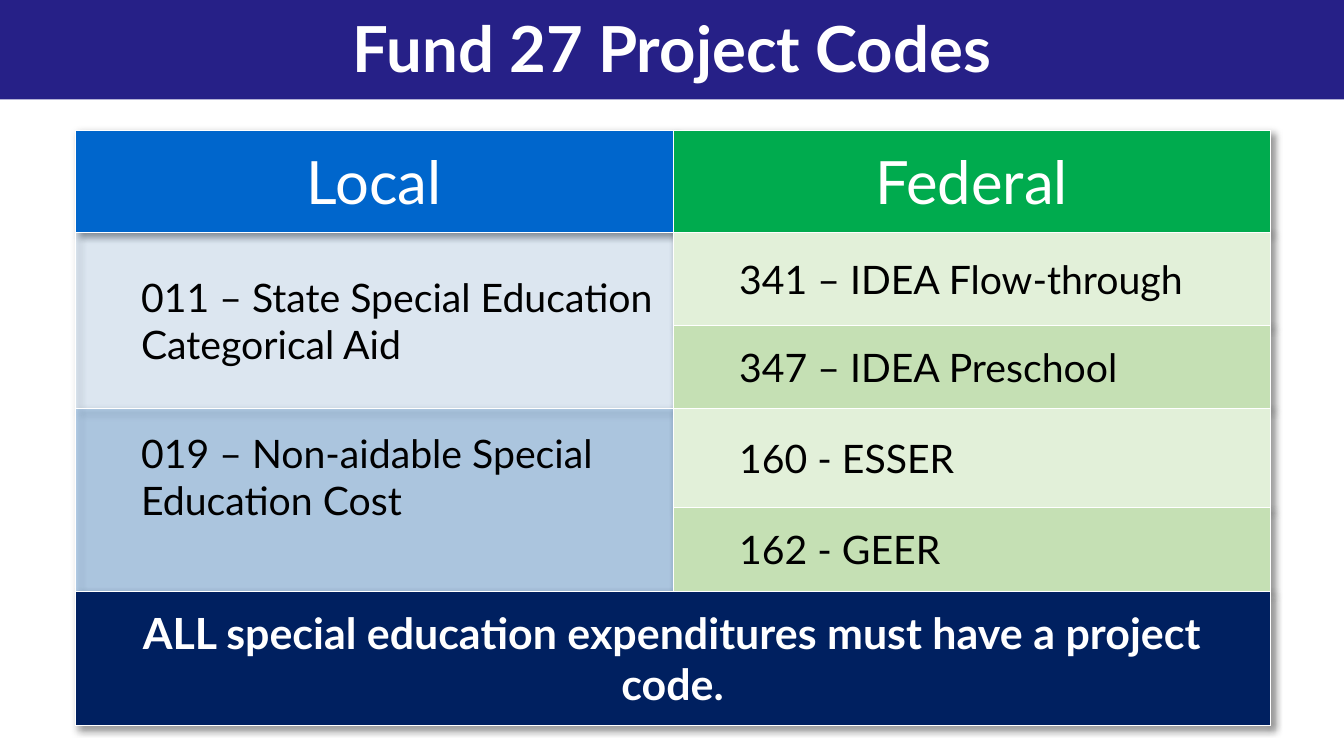
from dataclasses import dataclass

import lxml.etree
import pptx
import pptx.dml.color
import pptx.enum.text
import pptx.oxml
import pptx.util
from pptx.util import Inches

ALIGN = pptx.enum.text.PP_ALIGN
ANCHOR = pptx.enum.text.MSO_ANCHOR
NS = "http://schemas.openxmlformats.org/drawingml/2006/main"
FONT = "Lato"
MARGIN = 0.11
COLUMNS = [4.45, 4.44]
ROWS = [0.76, 0.69, 0.62, 0.74, 0.62, 1]


@dataclass
class TextStyle:
    size: int
    color: str
    align: ALIGN = ALIGN.LEFT
    anchor: ANCHOR = ANCHOR.MIDDLE
    bold: bool = False
    indent: float = 0
    spacing: int = 0


@dataclass
class Entry:
    row: int
    col: int
    text: str
    fill: str
    style: TextStyle
    rows: int = 1
    cols: int = 1
    opacity: int = 100
    lift: float = 0  # extra bottom margin


TITLE = TextStyle(34, "FFFFFF", ALIGN.CENTER, bold=True)
HEAD = TextStyle(32, "FFFFFF", ALIGN.CENTER, ANCHOR.TOP, spacing=6)
CODE = TextStyle(21, "000000", indent=0.38)
NOTE = TextStyle(23, "FFFFFF", ALIGN.CENTER, bold=True)

ENTRIES = [
    Entry(0, 0, "Local", "0066CC", HEAD),
    Entry(0, 1, "Federal", "00AB4E", HEAD),
    Entry(1, 0, "011 – State Special Education Categorical Aid", "0066CC", CODE,
          rows=2, opacity=10),
    Entry(3, 0, "019 – Non-aidable Special Education Cost", "0066CC", CODE,
          rows=2, opacity=25, lift=0.35),
    Entry(1, 1, "341 – IDEA Flow-through", "E2F0D9", CODE),
    Entry(2, 1, "347 – IDEA Preschool", "C5E0B4", CODE),
    Entry(3, 1, "160 - ESSER", "E2F0D9", CODE),
    Entry(4, 1, "162 - GEER", "C5E0B4", CODE),
    Entry(5, 0, "ALL special education expenditures must have a project code.",
          "002060", NOTE, cols=2),
]


def set_fill(fill, color: str, opacity: int = 100) -> None:
    fill.solid()
    fill.fore_color.rgb = pptx.dml.color.RGBColor.from_string(color)
    if opacity < 100:
        clr = fill._xPr.find(f"{{{NS}}}solidFill/{{{NS}}}srgbClr")
        lxml.etree.SubElement(clr, f"{{{NS}}}alpha", val=str(opacity * 1000))


def write(tf, text: str, style: TextStyle) -> None:
    p = tf.paragraphs[0]
    p.text = text
    p.alignment = style.align
    p.space_before = p.space_after = pptx.util.Pt(style.spacing)
    p.font.name = FONT
    p.font.size = pptx.util.Pt(style.size)
    p.font.bold = style.bold
    p.font.color.rgb = pptx.dml.color.RGBColor.from_string(style.color)
    if style.indent:
        p._p.get_or_add_pPr().set("marL", str(Inches(style.indent)))
        p._p.get_or_add_pPr().set("indent", "0")


def add_borders(cell, color: str, width: float) -> None:
    tcPr = cell._tc.get_or_add_tcPr()
    for i, side in enumerate("LRTB"):
        tcPr.insert(i, pptx.oxml.parse_xml(
            f'<a:ln{side} xmlns:a="{NS}" w="{int(width * 12700)}"><a:solidFill>'
            f'<a:srgbClr val="{color}"/></a:solidFill></a:ln{side}>'))


def add_table_shadow(table) -> None:
    table._tbl.tblPr.insert(0, pptx.oxml.parse_xml(
        f'<a:effectLst xmlns:a="{NS}"><a:outerShdw blurRad="50800" dist="38100" '
        'dir="2700000" algn="tl" rotWithShape="0"><a:srgbClr val="000000">'
        '<a:alpha val="40000"/></a:srgbClr></a:outerShdw></a:effectLst>'))


def draw_entry(table, entry: Entry) -> None:
    cell = table.cell(entry.row, entry.col)
    if entry.rows > 1 or entry.cols > 1:
        cell.merge(table.cell(entry.row + entry.rows - 1, entry.col + entry.cols - 1))
    cell.margin_left = cell.margin_right = cell.margin_top = Inches(MARGIN)
    cell.margin_bottom = Inches(MARGIN + entry.lift)
    cell.vertical_anchor = entry.style.anchor
    set_fill(cell.fill, entry.fill, entry.opacity)
    write(cell.text_frame, entry.text, entry.style)


def main() -> None:
    prs = pptx.Presentation()
    prs.slide_width, prs.slide_height = Inches(10), Inches(10 * 9 / 16)
    s = prs.slides.add_slide(prs.slide_layouts[5])

    # Title band
    sp = s.shapes.title
    sp.left, sp.top, sp.width, sp.height = map(Inches, (0, -0.04, 10, 0.78))
    set_fill(sp.fill, "262087")
    tf = sp.text_frame
    tf.auto_size = pptx.enum.text.MSO_AUTO_SIZE.NONE
    tf.vertical_anchor = TITLE.anchor
    write(tf, "Fund 27 Project Codes", TITLE)

    # Table of project codes
    table = s.shapes.add_table(len(ROWS), len(COLUMNS), Inches(0.56), Inches(0.97),
                               Inches(sum(COLUMNS)), Inches(sum(ROWS))).table
    table.first_row = table.horz_banding = False
    add_table_shadow(table)
    for column, width in zip(table.columns, COLUMNS):
        column.width = Inches(width)
    for row, height in zip(table.rows, ROWS):
        row.height = Inches(height)
    for cell in table.iter_cells():
        add_borders(cell, "FFFFFF", 0.5)
    for entry in ENTRIES:
        draw_entry(table, entry)

    prs.save("out.pptx")


if __name__ == "__main__":
    main()
